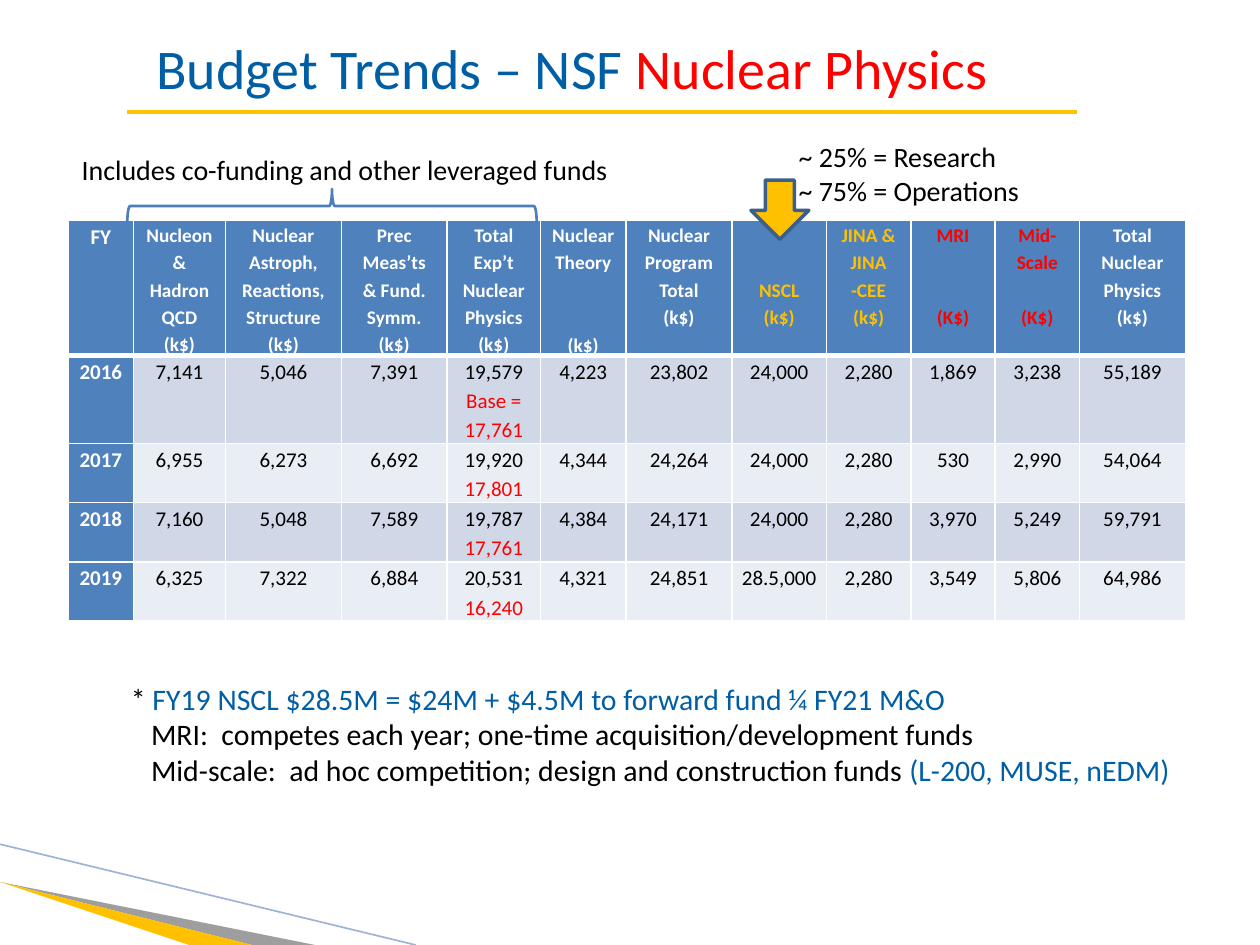
import pptx
import pptx.util
import pptx.dml.color
import pptx.enum.shapes
import pptx.enum.text
import pptx.oxml
import pptx.oxml.ns
import lxml.etree

Inches, Pt = pptx.util.Inches, pptx.util.Pt
SHAPES = pptx.enum.shapes.MSO_SHAPE
ALIGN = pptx.enum.text.PP_ALIGN
ANCHOR = pptx.enum.text.MSO_ANCHOR

FONT = "Calibri"
BLUE, GOLD, RED = "005EA4", "FFC000", "FF0000"
BLACK, WHITE, HEADER_BLUE = "000000", "FFFFFF", "4F81BD"
BANDS = ["D0D8E8", "E9EDF4"]

TITLE = [[("Budget Trends – NSF ", BLUE), ("Nuclear Physics", RED)]]
COFUNDING = [[("Includes co-funding and other leveraged funds", BLACK)]]
SPLIT = [[("~ 25% = Research", BLACK)], [("~ 75% = Operations", BLACK)]]
NOTES = [
    [("* ", BLACK), ("FY19 NSCL $28.5M = $24M + $4.5M to forward fund ¼ FY21 M&O", BLUE)],
    [("MRI:  competes each year; one-time acquisition/development funds", BLACK)],
    [("Mid-scale:  ad hoc competition; design and construction funds ", BLACK),
     ("(L-200, MUSE, nEDM)", BLUE)],
]

# Each column: width, heading colour, heading lines ("" leaves one line of space)
COLUMNS = [
    (0.52, WHITE, ["FY"]),
    (0.73, WHITE, ["Nucleon &", "Hadron QCD", "(k$)"]),
    (0.92, WHITE, ["Nuclear Astroph, Reactions, Structure (k$)"]),
    (0.84, WHITE, ["Prec", "Meas’ts", "& Fund. Symm.", "(k$)"]),
    (0.74, WHITE, ["Total", "Exp’t", "Nuclear", "Physics", "(k$)"]),
    (0.68, WHITE, ["Nuclear", "Theory", "", "", "(k$)"]),
    (0.84, WHITE, ["Nuclear Program Total", "(k$)"]),
    (0.75, GOLD, ["", "", "NSCL", "(k$)"]),
    (0.67, GOLD, ["JINA &", "JINA", "-CEE", "(k$)"]),
    (0.67, RED, ["MRI", "", "", "(K$)"]),
    (0.67, RED, ["Mid-", "Scale", "", "(K$)"]),
    (0.84, WHITE, ["Total Nuclear Physics", "(k$)"]),
]
BUDGETS = [
    "2016 7,141 5,046 7,391 19,579 4,223 23,802 24,000 2,280 1,869 3,238 55,189",
    "2017 6,955 6,273 6,692 19,920 4,344 24,264 24,000 2,280 530 2,990 54,064",
    "2018 7,160 5,048 7,589 19,787 4,384 24,171 24,000 2,280 3,970 5,249 59,791",
    "2019 6,325 7,322 6,884 20,531 4,321 24,851 28.5,000 2,280 3,549 5,806 64,986",
]
BASES = [["Base =", "17,761"], ["17,801"], ["17,761"], ["16,240"]]
BASE_COLUMN = 4
ROW_HEIGHTS = [1.07, 0.7, 0.47, 0.47, 0.47]
HEADING_LINE = 15.7


def rgb(color):
    return pptx.dml.color.RGBColor.from_string(color)


def style(run, size, color, bold=False):
    run.font.name, run.font.size, run.font.bold = FONT, Pt(size), bold
    run.font.color.rgb = rgb(color)


def add_text(slide, box, lines, size, wrap=False, align=ALIGN.LEFT, anchor=ANCHOR.TOP):
    frame = slide.shapes.add_textbox(*map(Inches, box)).text_frame
    frame.word_wrap, frame.vertical_anchor = wrap, anchor
    for number, line in enumerate(lines):
        paragraph = frame.add_paragraph() if number else frame.paragraphs[0]
        paragraph.alignment = align
        for words, color in line:
            run = paragraph.add_run()
            run.text = words
            style(run, size, color)
    return frame


def add_line(slide, start, end, color, width):
    line = slide.shapes.add_connector(
        pptx.enum.shapes.MSO_CONNECTOR.STRAIGHT, *map(Inches, start + end))
    line.line.color.rgb, line.line.width = rgb(color), Pt(width)
    lxml.etree.SubElement(line._element.spPr, pptx.oxml.ns.qn("a:effectLst"))


def add_wedge(slide, points, color, opacity=None):
    outline = slide.shapes.build_freeform(*points[0], scale=Inches(1))
    outline.add_line_segments(points[1:], close=True)
    wedge = outline.convert_to_shape()
    wedge.shadow.inherit = False
    wedge.fill.solid()
    wedge.fill.fore_color.rgb = rgb(color)
    wedge.line.fill.background()
    if opacity:
        shade = wedge._element.spPr.find(".//" + pptx.oxml.ns.qn("a:srgbClr"))
        lxml.etree.SubElement(shade, pptx.oxml.ns.qn("a:alpha"), val=str(opacity * 1000))


def add_marker(slide, kind, box, line_color, width, fill=None, rotation=0):
    marker = slide.shapes.add_shape(kind, *map(Inches, box))
    marker.shadow.inherit = False
    marker.rotation = rotation
    marker.line.color.rgb, marker.line.width = rgb(line_color), Pt(width)
    if fill:
        marker.fill.solid()
        marker.fill.fore_color.rgb = rgb(fill)
    else:
        marker.fill.background()


def fill_cell(cell, lines, size, bold, background, borders):
    cell.margin_left = cell.margin_right = Inches(0.07)
    cell.margin_top = cell.margin_bottom = 0
    frame, gap, used = cell.text_frame, 0, 0
    for words, color in lines:
        if not words:
            gap += HEADING_LINE
            continue
        paragraph = frame.add_paragraph() if used else frame.paragraphs[0]
        paragraph.text = words
        paragraph.alignment, paragraph.line_spacing = ALIGN.CENTER, 1.15
        if gap and used:
            paragraph.space_before = Pt(gap)
        elif gap:
            cell.margin_top = Pt(gap)
        style(paragraph.runs[0], size, color, bold)
        gap, used = 0, used + 1
    properties = cell._tc.get_or_add_tcPr()
    for side, width in borders.items():
        properties.append(pptx.oxml.parse_xml(
            f'<a:ln{side} xmlns:a="http://schemas.openxmlformats.org/drawingml/2006/main" '
            f'w="{Pt(width)}"><a:solidFill><a:srgbClr val="{WHITE}"/></a:solidFill></a:ln{side}>'))
    cell.fill.solid()
    cell.fill.fore_color.rgb = rgb(background)


def add_budget_table(slide):
    widths = [column[0] for column in COLUMNS]
    box = (0.54, 1.75, sum(widths), sum(ROW_HEIGHTS))
    table = slide.shapes.add_table(
        len(ROW_HEIGHTS), len(COLUMNS), *map(Inches, box)).table
    for row, height in zip(table.rows, ROW_HEIGHTS):
        row.height = Inches(height)
    for index, (width, color, heading) in enumerate(COLUMNS):
        table.columns[index].width = Inches(width)
        fill_cell(table.cell(0, index), [(words, color) for words in heading],
                  11 if index else 12, True, HEADER_BLUE, {"L": 1, "R": 1, "T": 1, "B": 3})
    for year, (budget, base) in enumerate(zip(BUDGETS, BASES)):
        for index, amount in enumerate(budget.split()):
            is_year = index == 0
            lines = [(amount, WHITE if is_year else BLACK)]
            if index == BASE_COLUMN:
                lines += [(words, RED) for words in base]
            fill_cell(table.cell(year + 1, index), lines, 12, is_year,
                      HEADER_BLUE if is_year else BANDS[year % 2], {"L": 1, "R": 1, "B": 1})


def main():
    deck = pptx.Presentation()
    deck.slide_width, deck.slide_height = Inches(10), Inches(7.5)
    slide = deck.slides.add_slide(deck.slide_layouts[6])

    add_wedge(slide, [(0.49, 6.82), (5.33, 7.5), (4.09, 7.5)], "0D0D0D", 40)
    add_wedge(slide, [(0.48, 6.81), (4.09, 7.5), (3.33, 7.5), (0.48, 6.82)], GOLD)
    add_line(slide, (0, 6.7), (3.3, 7.5), "9EB3D6", 0.95)

    add_text(slide, (0.5, 0, 8.08, 1.06), TITLE, 32, True, ALIGN.CENTER, ANCHOR.MIDDLE)
    add_budget_table(slide)
    add_text(slide, (6.24, 1.06, 1.98, 0.64), SPLIT, 16)
    add_marker(slide, SHAPES.DOWN_ARROW, (5.96, 1.43, 0.46, 0.47), "3A5F8C", 2, GOLD)
    add_marker(slide, SHAPES.RIGHT_BRACE, (2.5, 0.01, 0.27, 3.25), "4B7EBC", 1.5, rotation=270)
    add_text(slide, (0.55, 1.16, 4.43, 0.37), COFUNDING, 16)

    notes = add_text(slide, (0.94, 5.35, 8.45, 0.96), NOTES, 17, True)
    for number, paragraph in enumerate(notes.paragraphs):
        indent = paragraph._p.get_or_add_pPr()
        indent.set("marL", str(Inches(0.16)))
        indent.set("indent", str(0 if number else -Inches(0.16)))
    add_line(slide, (1.01, 0.89), (8.55, 0.89), GOLD, 2.25)

    deck.save("out.pptx")


if __name__ == "__main__":
    main()
